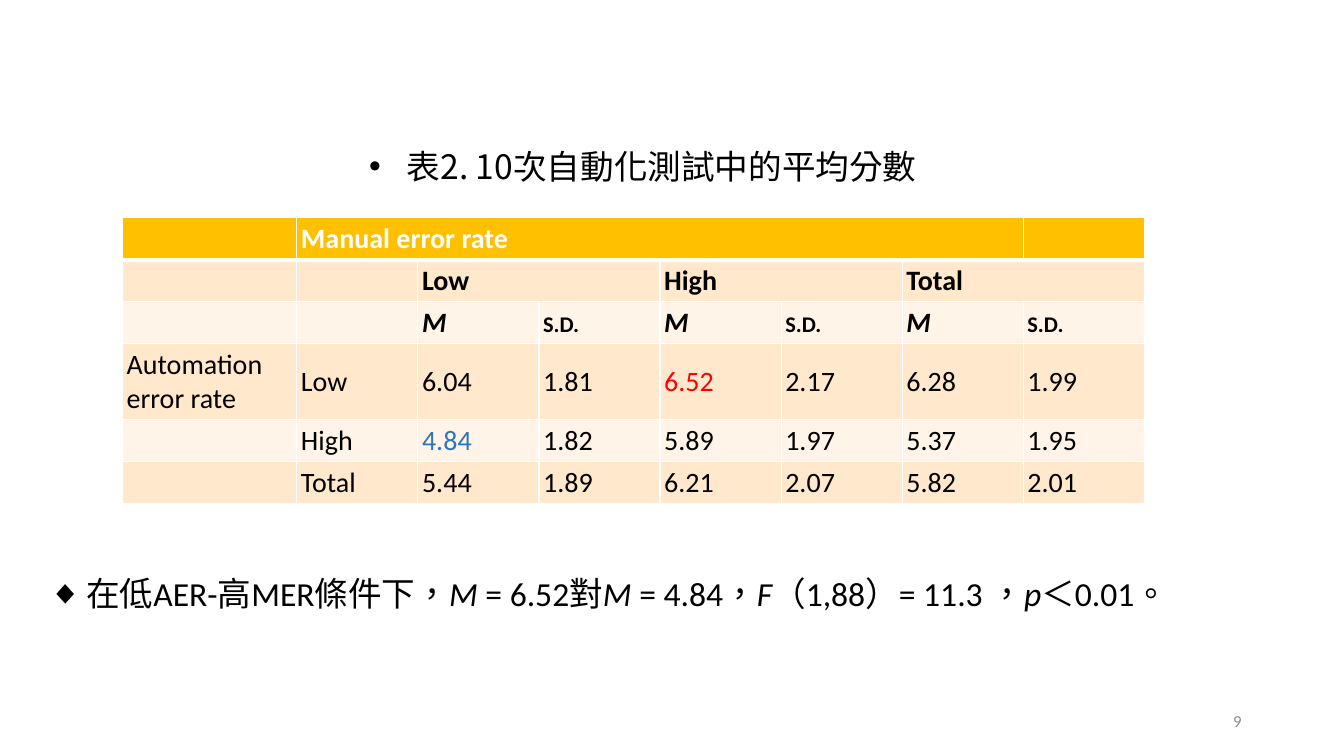
from dataclasses import dataclass

import pptx
import pptx.dml.color
import pptx.enum.text
import pptx.oxml
import pptx.oxml.ns
import pptx.util

Pt = pptx.util.Pt
Align = pptx.enum.text.PP_ALIGN
Anchor = pptx.enum.text.MSO_ANCHOR


@dataclass(frozen=True)
class Theme:
    latin: str = "Calibri"
    chinese: str = "Noto Sans CJK SC"
    black: str = "000000"
    white: str = "FFFFFF"
    gray: str = "8C8C8C"
    red: str = "FF0000"
    blue: str = "2E75B6"
    header: str = "FFC000"
    bands: tuple = ("FFE8CC", "FFF4E7")
    body_size: int = 24
    table_size: int = 20
    number_size: int = 12


THEME = Theme()
SCORES = [
    ["", "Manual error rate", "", "", "", "", "", ""],
    ["", "", "Low", "", "High", "", "Total", ""],
    ["", "", "M", "s.d.", "M", "s.d.", "M", "s.d."],
    ["Automation error rate", "Low", "6.04", "1.81", "6.52", "2.17", "6.28", "1.99"],
    ["", "High", "4.84", "1.82", "5.89", "1.97", "5.37", "1.95"],
    ["", "Total", "5.44", "1.89", "6.21", "2.07", "5.82", "2.01"],
]
MERGES = [(0, 1, 6), (1, 2, 3), (1, 4, 5), (1, 6, 7)]
HIGHLIGHTS = {"6.52": THEME.red, "4.84": THEME.blue}
FINDING = [
    ("在低AER-高MER條件下，", False), ("M\u00a0", True), ("= 6.52對", False),
    ("M\u00a0", True), ("= 4.84，", False), ("F", True),
    ("（1,88）= 11.3 ，", False), ("p", True), ("＜0.01。", False),
]


def rgb(color):
    return pptx.dml.color.RGBColor.from_string(color)


def make_xml(tag, content="", attributes=""):
    namespace = pptx.oxml.ns.nsdecls("a")
    return pptx.oxml.parse_xml(f"<a:{tag} {namespace} {attributes}>{content}</a:{tag}>")


def add_text(para, text, size=THEME.body_size, color=THEME.black, font=THEME.latin,
             bold=False, italic=False, small_caps=False):
    span = para.add_run()
    span.text = text
    span.font.size = Pt(size)
    span.font.name = font
    span.font.bold = bold
    span.font.italic = italic
    span.font.color.rgb = rgb(color)
    properties = span.font._element
    properties.set("lang", "zh-TW")
    if small_caps:
        properties.set("cap", "small")
    properties.append(make_xml("ea", attributes=f'typeface="{THEME.chinese}"'))


def add_box(page, left, top, width, height, anchor=Anchor.TOP):
    box = page.shapes.add_textbox(Pt(left), Pt(top), Pt(width), Pt(height))
    box.text_frame.word_wrap = True
    box.text_frame.vertical_anchor = anchor
    return box.text_frame.paragraphs[0]


def add_bullet(para, mark, indent=27):
    properties = para._p.get_or_add_pPr()
    properties.set("marL", str(Pt(indent)))
    properties.set("indent", str(Pt(-indent)))
    properties.append(make_xml("buFont", attributes='typeface="Arial"'))
    properties.append(make_xml("buChar", attributes=f'char="{mark}"'))


def add_caption(page, left, top, width, height):
    para = add_box(page, left, top, width, height)
    para.line_spacing = 1.2
    para.space_before = Pt(10)
    add_bullet(para, "•")
    add_text(para, "表2. 10次自動化測試中的平均分數", font=THEME.chinese)


def add_finding(page, left, top, width, height):
    para = add_box(page, left, top, width, height)
    add_bullet(para, "◆")
    for text, italic in FINDING:
        add_text(para, text, italic=italic)


def add_page_number(page, left, top, width, height):
    para = add_box(page, left, top, width, height, Anchor.MIDDLE)
    para.alignment = Align.RIGHT
    add_text(para, "9", size=THEME.number_size, color=THEME.gray)


def style_cell(cell, row):
    """Draws the white grid, thick below the header, and the row's band."""
    cell.margin_left = cell.margin_right = cell.margin_top = cell.margin_bottom = Pt(3)
    cell.vertical_anchor = Anchor.MIDDLE
    fill = f'<a:solidFill><a:srgbClr val="{THEME.white}"/></a:solidFill>'
    for side in "LRTB":
        weight = 3 if (row, side) in ((0, "B"), (1, "T")) else 1
        line = make_xml(f"ln{side}", fill, f'w="{Pt(weight)}"')
        cell._tc.get_or_add_tcPr().append(line)
    cell.fill.solid()
    cell.fill.fore_color.rgb = rgb(THEME.bands[(row - 1) % 2] if row else THEME.header)


def add_scores(page, left, top, first_width, column_width, row_height):
    rows, columns = len(SCORES), len(SCORES[0])
    width = first_width + column_width * (columns - 1)
    table = page.shapes.add_table(rows, columns, Pt(left), Pt(top), Pt(width),
                                  Pt(row_height * rows)).table
    table.first_row = table.horz_banding = False
    for index, column in enumerate(table.columns):
        column.width = Pt(column_width if index else first_width)
    for row, texts in enumerate(SCORES):
        table.rows[row].height = Pt(row_height)
        for column, text in enumerate(texts):
            cell = table.cell(row, column)
            style_cell(cell, row)
            if text:
                color = HIGHLIGHTS.get(text, THEME.black) if row else THEME.white
                add_text(cell.text_frame.paragraphs[0], text, size=THEME.table_size,
                         color=color, bold=row < 3, italic=text == "M",
                         small_caps=text == "s.d.")
    for row, first, last in MERGES:
        table.cell(row, first).merge(table.cell(row, last))


def main():
    deck = pptx.Presentation()
    deck.slide_width, deck.slide_height = Pt(960), Pt(540)
    page = deck.slides.add_slide(deck.slide_layouts[6])
    add_caption(page, 256.5, 95, 469, 40)
    add_page_number(page, 678, 500.5, 216, 29)
    add_scores(page, 87.5, 155.5, first_width=124.5, column_width=86.5, row_height=29.5)
    add_finding(page, 27.5, 406, 950, 36)
    deck.save("out.pptx")


if __name__ == "__main__":
    main()
